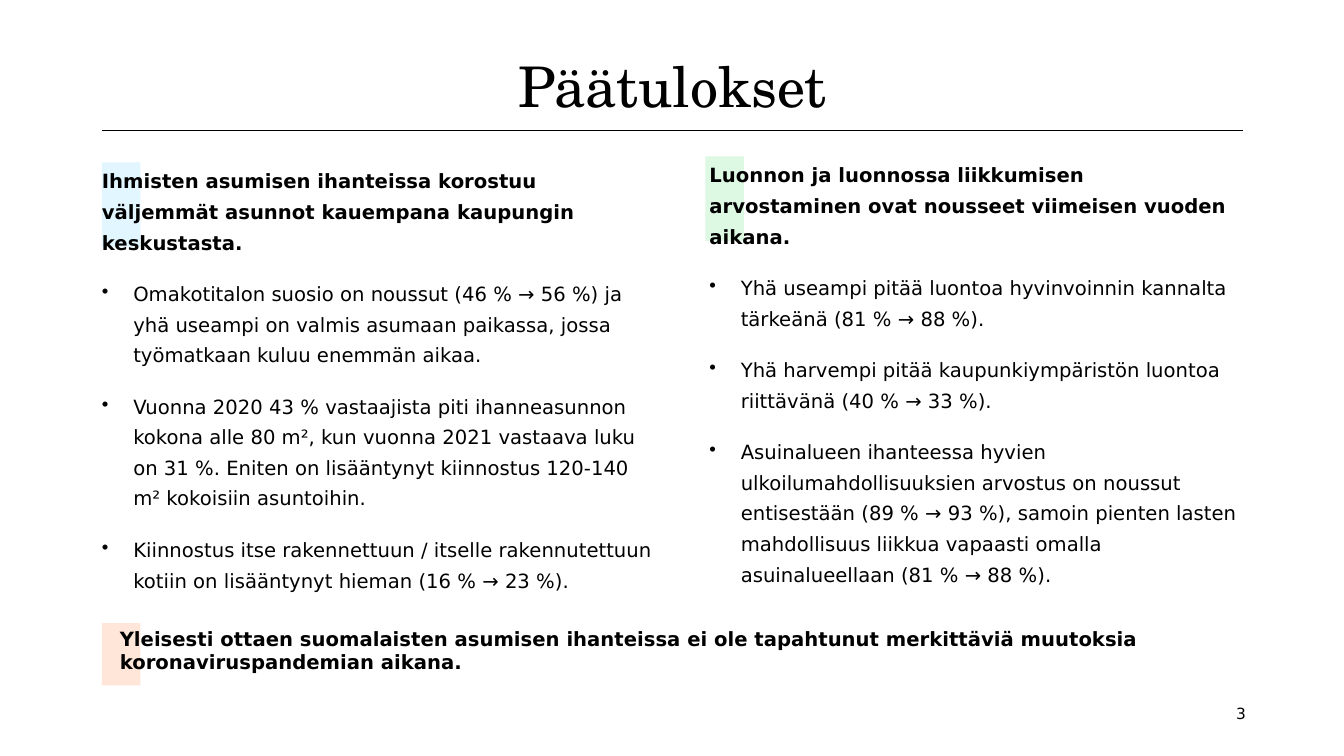
import dataclasses

import pptx
import pptx.dml.color
import pptx.enum.shapes
import pptx.enum.text
import pptx.oxml
import pptx.oxml.ns
import pptx.util

Cm = pptx.util.Cm
Pt = pptx.util.Pt
Align = pptx.enum.text.PP_ALIGN
Anchor = pptx.enum.text.MSO_ANCHOR


@dataclasses.dataclass(frozen=True)
class Theme:
    ink: str = "000000"
    blue: str = "E1F6FE"
    green: str = "DDF8E3"
    peach: str = "FFE6D9"
    title_font: str = "TeX Gyre Schola"
    body_font: str = "DejaVu Sans"
    title_size: int = 40
    body_size: int = 14
    number_size: int = 11


THEME = Theme()
MARKER_WIDTH = 0.97
BULLET_INDENT = 0.79

HOUSING = (
    "Ihmisten asumisen ihanteissa korostuu väljemmät asunnot kauempana kaupungin keskustasta.",
    "Omakotitalon suosio on noussut (46 % → 56 %) ja yhä useampi on valmis asumaan "
    "paikassa, jossa työmatkaan kuluu enemmän aikaa.",
    "Vuonna 2020 43 % vastaajista piti ihanneasunnon kokona alle 80 m², kun vuonna 2021 "
    "vastaava luku on 31 %. Eniten on lisääntynyt kiinnostus 120-140 m² kokoisiin asuntoihin.",
    "Kiinnostus itse rakennettuun / itselle rakennutettuun kotiin on lisääntynyt hieman "
    "(16 % → 23 %).",
)
NATURE = (
    "Luonnon ja luonnossa liikkumisen arvostaminen ovat nousseet viimeisen vuoden aikana.",
    "Yhä useampi pitää luontoa hyvinvoinnin kannalta tärkeänä (81 % → 88 %).",
    "Yhä harvempi pitää kaupunkiympäristön luontoa riittävänä (40 % → 33 %).",
    "Asuinalueen ihanteessa hyvien ulkoilumahdollisuuksien arvostus on noussut entisestään "
    "(89 % → 93 %), samoin pienten lasten mahdollisuus liikkua vapaasti omalla "
    "asuinalueellaan (81 % → 88 %).",
)
CONCLUSION = (
    "Yleisesti ottaen suomalaisten asumisen ihanteissa ei ole tapahtunut merkittäviä "
    "muutoksia koronaviruspandemian aikana."
)


def colour(value):
    return pptx.dml.color.RGBColor.from_string(value)


def add_text(page, left, top, width, height, lines, size=THEME.body_size,
             font=THEME.body_font, align=Align.LEFT, anchor=Anchor.TOP, inset=True):
    """Place a wrapped text box and return its text frame."""
    box = page.shapes.add_textbox(Cm(left), Cm(top), Cm(width), Cm(height))
    frame = box.text_frame
    frame.word_wrap = True
    frame.vertical_anchor = anchor
    if not inset:
        frame.margin_left = frame.margin_right = 0
        frame.margin_top = frame.margin_bottom = 0
    frame.text = "\n".join(lines)
    for para in frame.paragraphs:
        para.alignment = align
        for span in para.runs:
            span.font.name = font
            span.font.size = Pt(size)
            span.font.color.rgb = colour(THEME.ink)
    return frame


def add_marker(page, left, top, height, fill):
    """Place a pastel block behind the start of a statement."""
    marker = page.shapes.add_shape(
        pptx.enum.shapes.MSO_SHAPE.RECTANGLE, Cm(left), Cm(top), Cm(MARKER_WIDTH), Cm(height))
    marker.shadow.inherit = False
    marker.fill.solid()
    marker.fill.fore_color.rgb = colour(fill)
    marker.line.fill.background()


def make_bullet(para):
    properties = para._p.get_or_add_pPr()
    properties.set("marL", str(Cm(BULLET_INDENT)))
    properties.set("indent", str(-Cm(BULLET_INDENT)))
    bullet = pptx.oxml.parse_xml(
        f'<a:buChar {pptx.oxml.ns.nsdecls("a")} char="•"/>')
    properties.append(bullet)


def add_header(page, left, top, width, height):
    """Title with a thin rule below it."""
    add_text(page, left, top, width, height, ["Päätulokset"], THEME.title_size,
             THEME.title_font, Align.CENTER, Anchor.BOTTOM, inset=False)
    rule_top = Cm(top + height + 0.28)
    rule = page.shapes.add_connector(
        pptx.enum.shapes.MSO_CONNECTOR.STRAIGHT, Cm(left), rule_top, Cm(left + width), rule_top)
    rule.line.color.rgb = colour(THEME.ink)
    rule.line.width = Pt(0.5)
    rule._element.spPr.append(
        pptx.oxml.parse_xml(f'<a:effectLst {pptx.oxml.ns.nsdecls("a")}/>'))


def add_findings(page, left, top, width, height, lines, fill, marker_shift=0):
    """Bold statement on a marker, followed by bulleted findings."""
    add_marker(page, left - marker_shift, top, 2.13, fill)
    frame = add_text(page, left, top, width, height, lines, inset=False)
    for index, para in enumerate(frame.paragraphs):
        if index:
            make_bullet(para)
            para.space_before = Pt(5)
        para.line_spacing = 1.3
        para.space_after = Pt(10)
        para.runs[0].font.bold = index == 0


def add_conclusion(page, left, top, width, height):
    """Bold closing statement on its marker."""
    add_marker(page, left, top + 0.03, 1.57, THEME.peach)
    frame = add_text(page, left + 0.2, top, width, height, [CONCLUSION])
    frame.paragraphs[0].runs[0].font.bold = True


def add_page_number(page, left, top, width, height):
    add_text(page, left, top, width, height, ["3"], THEME.number_size,
             align=Align.RIGHT, anchor=Anchor.MIDDLE)


def main():
    deck = pptx.Presentation()
    deck.slide_width, deck.slide_height = Cm(33.87), Cm(19.05)
    page = deck.slides.add_slide(deck.slide_layouts[6])

    add_header(page, 2.57, 0.74, 28.75, 2.26)
    add_findings(page, 2.57, 4.09, 13.97, 12.09, HOUSING, THEME.blue)
    add_findings(page, 17.88, 3.94, 13.36, 13.41, NATURE, THEME.green, marker_shift=0.1)
    add_conclusion(page, 2.57, 15.67, 28.75, 1.45)
    add_page_number(page, 22.68, 17.58, 8.97, 0.79)

    deck.save("out.pptx")


if __name__ == "__main__":
    main()
